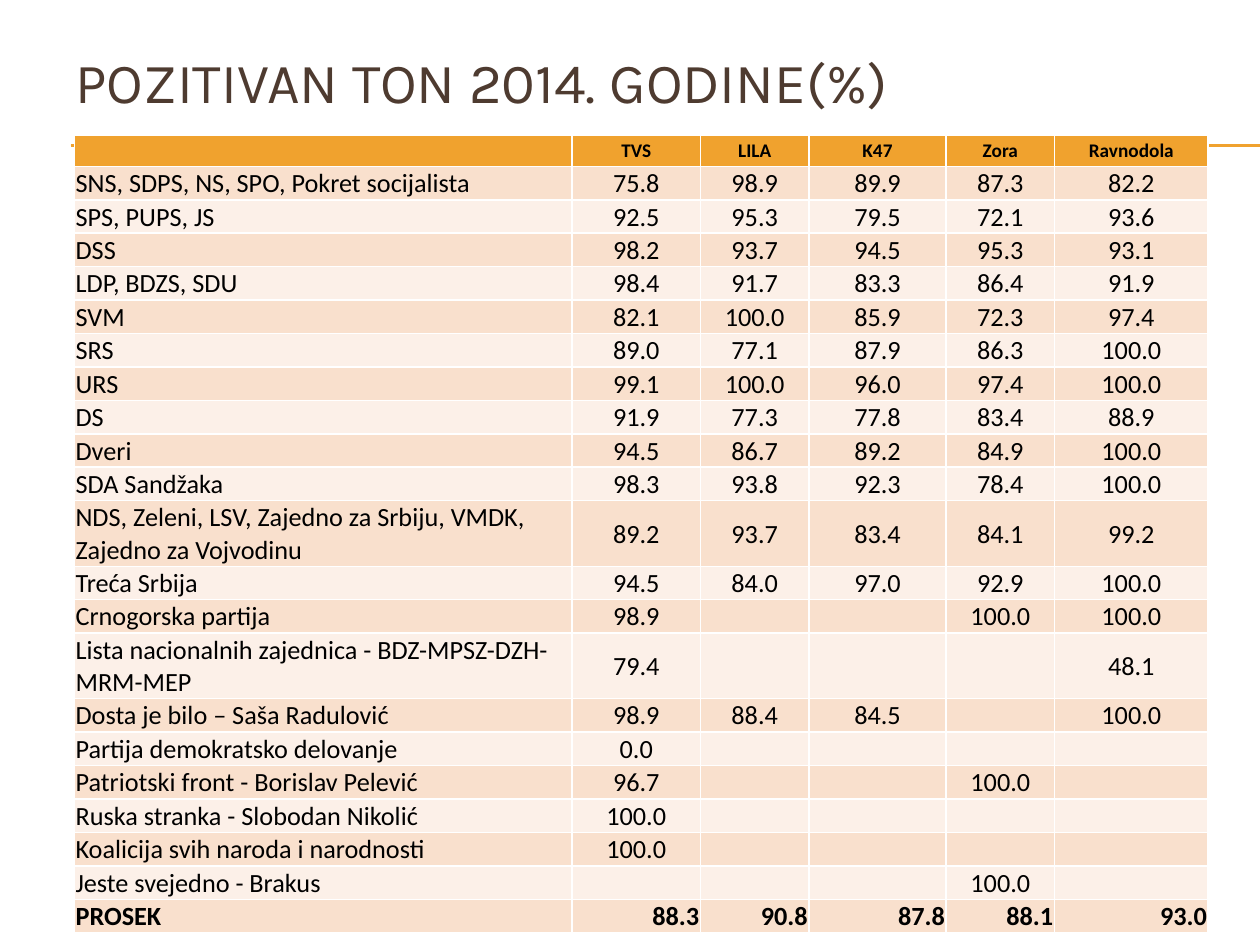
"""Build a slide with a table of positive-tone shares by party list and broadcaster."""
import lxml.etree
import pptx
import pptx.dml.color
import pptx.enum.shapes
import pptx.enum.text
import pptx.oxml.ns
import pptx.util

Inches = pptx.util.Inches
Pt = pptx.util.Pt
ALIGN = pptx.enum.text.PP_ALIGN
qn = pptx.oxml.ns.qn


def color(value):
    return pptx.dml.color.RGBColor.from_string(value)


def style(font, size, name, value, bold=False):
    font.size = Pt(size)
    font.name = name
    font.bold = bold
    font.color.rgb = color(value)


ROWS = [
    ["", "TVS", "LILA", "K47", "Zora", "Ravnodola"],
    ["SNS, SDPS, NS, SPO, Pokret socijalista", "75.8", "98.9", "89.9", "87.3", "82.2"],
    ["SPS, PUPS, JS", "92.5", "95.3", "79.5", "72.1", "93.6"],
    ["DSS", "98.2", "93.7", "94.5", "95.3", "93.1"],
    ["LDP, BDZS, SDU", "98.4", "91.7", "83.3", "86.4", "91.9"],
    ["SVM", "82.1", "100.0", "85.9", "72.3", "97.4"],
    ["SRS", "89.0", "77.1", "87.9", "86.3", "100.0"],
    ["URS", "99.1", "100.0", "96.0", "97.4", "100.0"],
    ["DS", "91.9", "77.3", "77.8", "83.4", "88.9"],
    ["Dveri", "94.5", "86.7", "89.2", "84.9", "100.0"],
    ["SDA Sandžaka", "98.3", "93.8", "92.3", "78.4", "100.0"],
    ["NDS, Zeleni, LSV, Zajedno za Srbiju, VMDK, Zajedno za Vojvodinu",
     "89.2", "93.7", "83.4", "84.1", "99.2"],
    ["Treća Srbija", "94.5", "84.0", "97.0", "92.9", "100.0"],
    ["Crnogorska partija", "98.9", "", "", "100.0", "100.0"],
    ["Lista nacionalnih zajednica - BDZ-MPSZ-DZH-MRM-MEP", "79.4", "", "", "", "48.1"],
    ["Dosta je bilo – Saša Radulović", "98.9", "88.4", "84.5", "", "100.0"],
    ["Partija demokratsko delovanje", "0.0", "", "", "", ""],
    ["Patriotski front - Borislav Pelević", "96.7", "", "", "100.0", ""],
    ["Ruska stranka - Slobodan Nikolić", "100.0", "", "", "", ""],
    ["Koalicija svih naroda i narodnosti", "100.0", "", "", "", ""],
    ["Jeste svejedno - Brakus", "", "", "", "100.0", ""],
    ["PROSEK", "88.3", "90.8", "87.8", "88.1", "93.0"],
]
COLUMN_WIDTHS = [3.95, 1.02, 0.86, 1.09, 0.86, 1.22]
ROW_HEIGHT = 0.25
ACCENT = "F0A22E"
BANDS = ["FCF0E8", "F9E0CD"]

deck = pptx.Presentation()
deck.slide_width = Inches(10)
deck.slide_height = Inches(7.5)
page = deck.slides.add_slide(deck.slide_layouts[5])

title = page.shapes.title
title.left, title.top = Inches(0.5), Inches(0.3)
title.width, title.height = Inches(9), Inches(0.69)
title.text_frame.text = "POZITIVAN TON 2014. GODINE(%)"
title.text_frame.vertical_anchor = pptx.enum.text.MSO_ANCHOR.MIDDLE
title.text_frame.paragraphs[0].alignment = ALIGN.LEFT
style(title.text_frame.paragraphs[0].runs[0].font, 32.4, "Karla", "4E3B30")

for height in (1.15, 1.16):
    rule = page.shapes.add_connector(
        pptx.enum.shapes.MSO_CONNECTOR.STRAIGHT,
        Inches(0.56), Inches(height), deck.slide_width, Inches(height))
    rule.line.color.rgb = color(ACCENT)
    rule.line.width = Pt(0.75)
    lxml.etree.SubElement(rule._element.spPr, qn("a:effectLst"))

table = page.shapes.add_table(
    len(ROWS), len(COLUMN_WIDTHS), Inches(0.59), Inches(1.07),
    Inches(sum(COLUMN_WIDTHS)), Inches(ROW_HEIGHT * len(ROWS))).table
for column, width in zip(table.columns, COLUMN_WIDTHS):
    column.width = Inches(width)

last = len(ROWS) - 1
for row_index, texts in enumerate(ROWS):
    table.rows[row_index].height = Inches(ROW_HEIGHT)
    size = 11 if row_index == 0 else 15
    for column_index, text in enumerate(texts):
        cell = table.cell(row_index, column_index)
        cell.fill.solid()
        cell.fill.fore_color.rgb = color(BANDS[row_index % 2] if row_index else ACCENT)
        cell.margin_left = cell.margin_right = cell.margin_top = Inches(0.01)
        cell.margin_bottom = 0
        cell.vertical_anchor = pptx.enum.text.MSO_ANCHOR.MIDDLE
        cell.text_frame.text = text
        para = cell.text_frame.paragraphs[0]
        if column_index:
            para.alignment = ALIGN.RIGHT if row_index == last else ALIGN.CENTER
        for span in para.runs:
            style(span.font, size, "Calibri", "000000", row_index in (0, last))
        if not text:
            end = lxml.etree.SubElement(para._p, qn("a:endParaRPr"))
            end.set("sz", str(size * 100))

deck.save("out.pptx")
